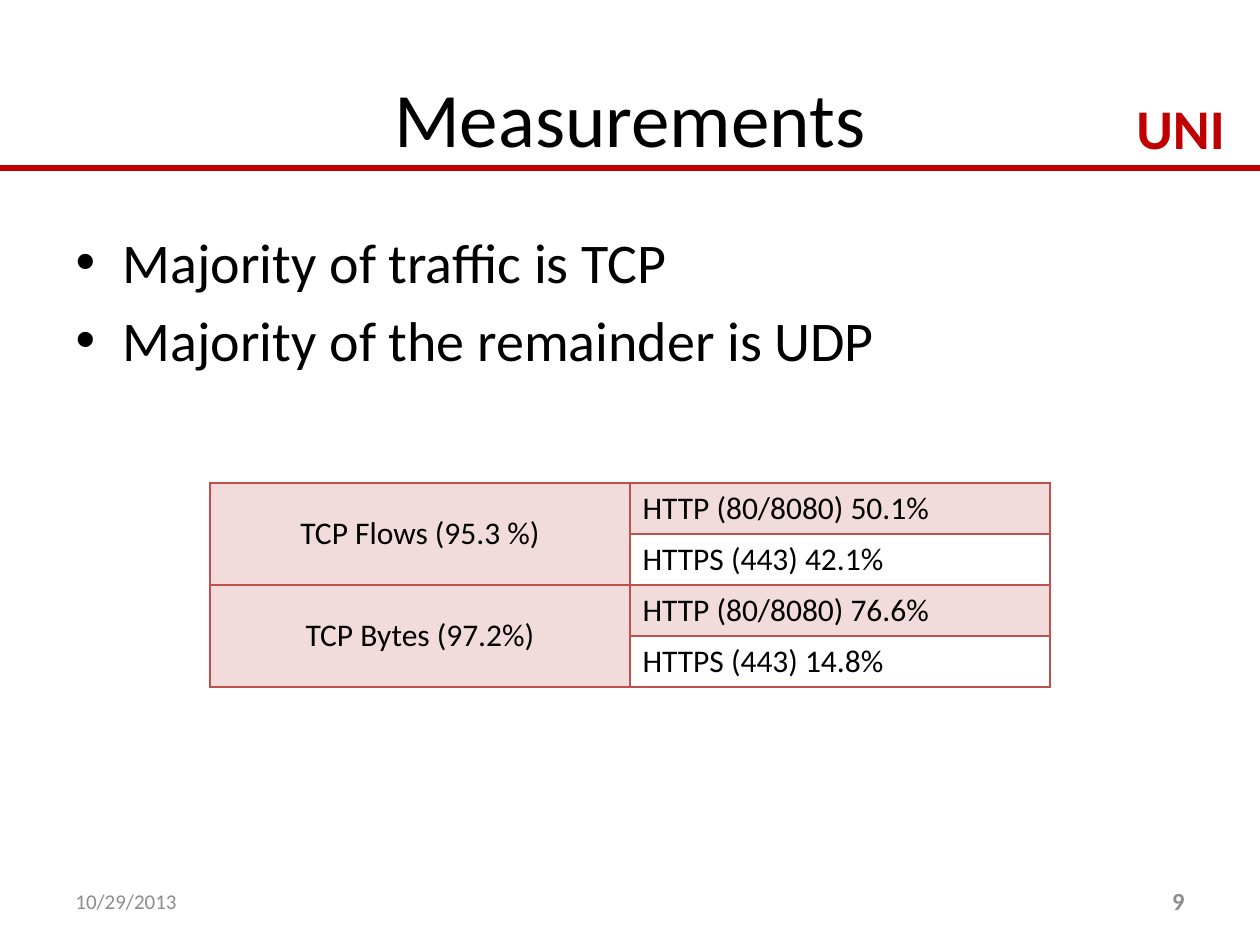
"""Build the Measurements slide with its traffic table."""
from dataclasses import dataclass

from lxml import etree
from pptx import Presentation
from pptx.dml.color import RGBColor
from pptx.enum.shapes import MSO_CONNECTOR
from pptx.enum.text import MSO_ANCHOR, PP_ALIGN
from pptx.oxml.ns import qn
from pptx.util import Emu, Pt

STRAIGHT = MSO_CONNECTOR.STRAIGHT
TOP, MIDDLE = MSO_ANCHOR.TOP, MSO_ANCHOR.MIDDLE
LEFT, CENTER, RIGHT = PP_ALIGN.LEFT, PP_ALIGN.CENTER, PP_ALIGN.RIGHT
PX_PER_INCH = 126


@dataclass(frozen=True)
class Theme:
    font: str = "Calibri"
    ink: str = "000000"
    brand: str = "C00000"
    muted: str = "8C8C8C"
    accent: str = "C0504D"
    tint_alpha: int = 20
    title: int = 44
    body: int = 32
    table: int = 18
    number: int = 14
    date: int = 12
    rule: float = 3.25
    border: int = 1


THEME = Theme()


@dataclass(frozen=True)
class Box:
    left: int
    top: int
    width: int
    height: int


@dataclass(frozen=True)
class Label:
    text: str
    box: Box
    size: int
    color: str
    bold: bool = False
    align: PP_ALIGN = LEFT
    anchor: MSO_ANCHOR = MIDDLE
    wrap: bool = True


@dataclass(frozen=True)
class Group:
    name: str
    protocols: tuple[str, ...]


TITLE_BOX = Box(63, 38, 1134, 157)
BODY_BOX = Box(63, 221, 1134, 624)
TABLE_BOX = Box(210, 483, 840, 204)
RULE_Y = 168
BULLETS = ("Majority of traffic is TCP", "Majority of the remainder is UDP")
LABELS = (
    Label("UNI", Box(1124, 87, 122, 81), THEME.body, THEME.brand, bold=True,
          anchor=TOP, wrap=False),
    Label("10/29/2013", Box(63, 876, 294, 50), THEME.date, THEME.muted),
    Label("9", Box(903, 876, 294, 50), THEME.number, THEME.muted, bold=True,
          align=RIGHT),
)
GROUPS = (
    Group("TCP Flows (95.3 %)", ("HTTP (80/8080) 50.1%", "HTTPS (443) 42.1%")),
    Group("TCP Bytes (97.2%)", ("HTTP (80/8080) 76.6%", "HTTPS (443) 14.8%")),
)


def px(n: int) -> Emu:
    """Turn whole pixels into EMU."""
    return Emu(round(n * 914400 / PX_PER_INCH))


def place(sp, box: Box) -> None:
    """Move and size a shape."""
    for name in ("left", "top", "width", "height"):
        setattr(sp, name, px(getattr(box, name)))


def write(tf, lines: tuple[str, ...], size: int, color: str = THEME.ink,
          bold: bool = False, align: PP_ALIGN | None = None) -> None:
    """Fill a text frame with one formatted paragraph per line."""
    fmt = {"name": THEME.font, "size": Pt(size), "bold": bold}
    for i, line in enumerate(lines):
        p = tf.paragraphs[0] if i == 0 else tf.add_paragraph()
        p.alignment = align
        r = p.add_run()
        r.text = line
        for name, value in fmt.items():
            setattr(r.font, name, value)
        r.font.color.rgb = RGBColor.from_string(color)


def add_label(s, label: Label) -> None:
    """Add a one-line text box."""
    b = label.box
    sp = s.shapes.add_textbox(px(b.left), px(b.top), px(b.width), px(b.height))
    tf = sp.text_frame
    tf.word_wrap = label.wrap
    tf.vertical_anchor = label.anchor
    write(tf, (label.text,), label.size, label.color, label.bold, label.align)


def add_rule(s, y: int, width: int) -> None:
    """Add the full-width line under the title."""
    cx = s.shapes.add_connector(STRAIGHT, px(0), px(y), px(width), px(y))
    cx.line.color.rgb = RGBColor.from_string(THEME.brand)
    cx.line.width = Pt(THEME.rule)
    etree.SubElement(cx._element.spPr, qn("a:effectLst"))


def style_cell(cell, tinted: bool) -> None:
    """Give a cell its borders and its tint, if any."""
    tc_pr = cell._tc.get_or_add_tcPr()
    for side in ("L", "R", "T", "B"):
        ln = etree.SubElement(tc_pr, qn(f"a:ln{side}"), w=str(Pt(THEME.border)))
        fill = etree.SubElement(ln, qn("a:solidFill"))
        etree.SubElement(fill, qn("a:srgbClr"), val=THEME.accent)
    if not tinted:
        cell.fill.background()
        return
    cell.fill.solid()
    cell.fill.fore_color.rgb = RGBColor.from_string(THEME.accent)
    clr = tc_pr.find(f"{qn('a:solidFill')}/{qn('a:srgbClr')}")
    etree.SubElement(clr, qn("a:alpha"), val=str(THEME.tint_alpha * 1000))


def add_traffic_table(s, groups: tuple[Group, ...], box: Box) -> None:
    """Add the table with one merged name cell per group."""
    n_rows = sum(len(g.protocols) for g in groups)
    table = s.shapes.add_table(n_rows, 2, px(box.left), px(box.top),
                               px(box.width), px(box.height)).table
    table.first_row = table.horz_banding = False
    row = 0
    for group in groups:
        name = table.cell(row, 0)
        name.merge(table.cell(row + len(group.protocols) - 1, 0))
        name.vertical_anchor = MIDDLE
        write(name.text_frame, (group.name,), THEME.table, align=CENTER)
        for i, protocol in enumerate(group.protocols):
            cell = table.cell(row, 1)
            write(cell.text_frame, (protocol,), THEME.table)
            style_cell(table.cell(row, 0), tinted=True)
            style_cell(cell, tinted=i % 2 == 0)
            row += 1


def main() -> None:
    """Build and save the slide."""
    prs = Presentation()
    prs.slide_width, prs.slide_height = px(1260), px(945)
    s = prs.slides.add_slide(prs.slide_layouts[1])
    title, body = s.shapes.title, s.placeholders[1]
    place(title, TITLE_BOX)
    write(title.text_frame, ("Measurements",), THEME.title, align=CENTER)
    place(body, BODY_BOX)
    write(body.text_frame, BULLETS, THEME.body)
    add_rule(s, RULE_Y, 1260)
    for label in LABELS:
        add_label(s, label)
    add_traffic_table(s, GROUPS, TABLE_BOX)
    prs.save("out.pptx")


if __name__ == "__main__":
    main()
